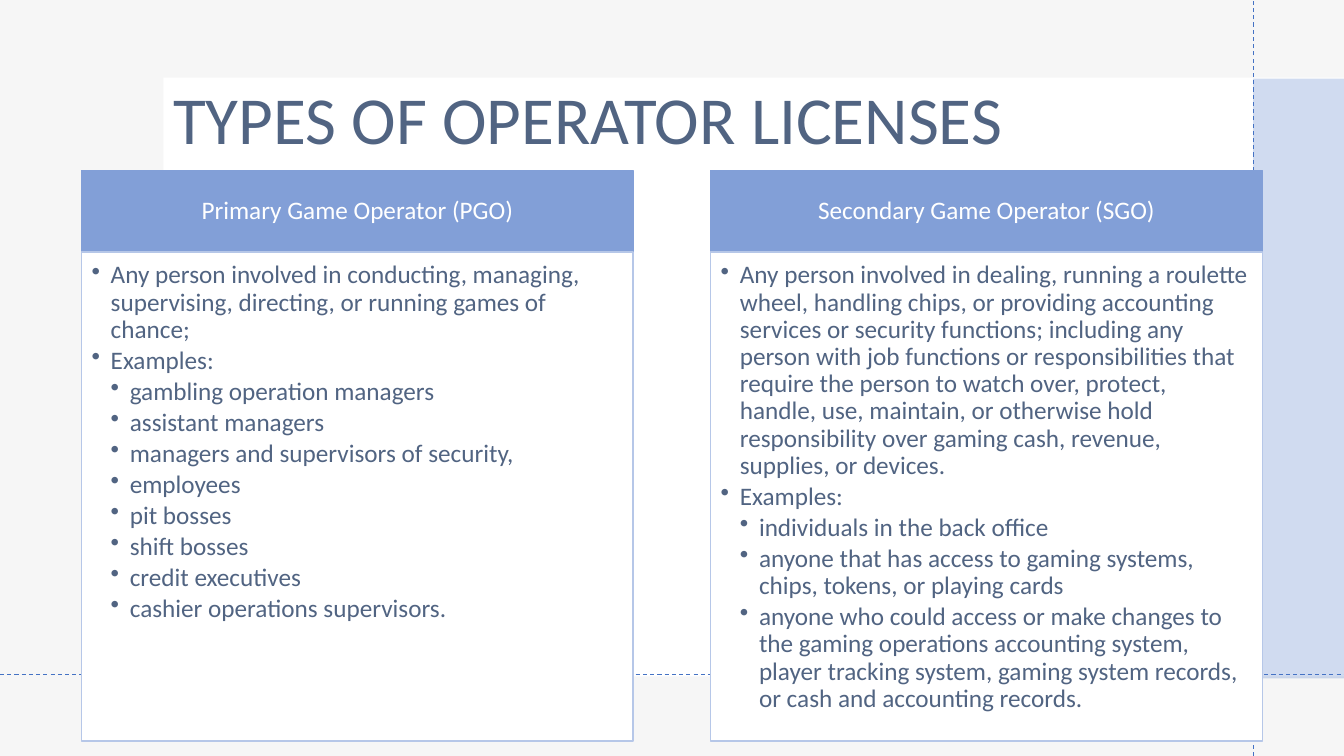
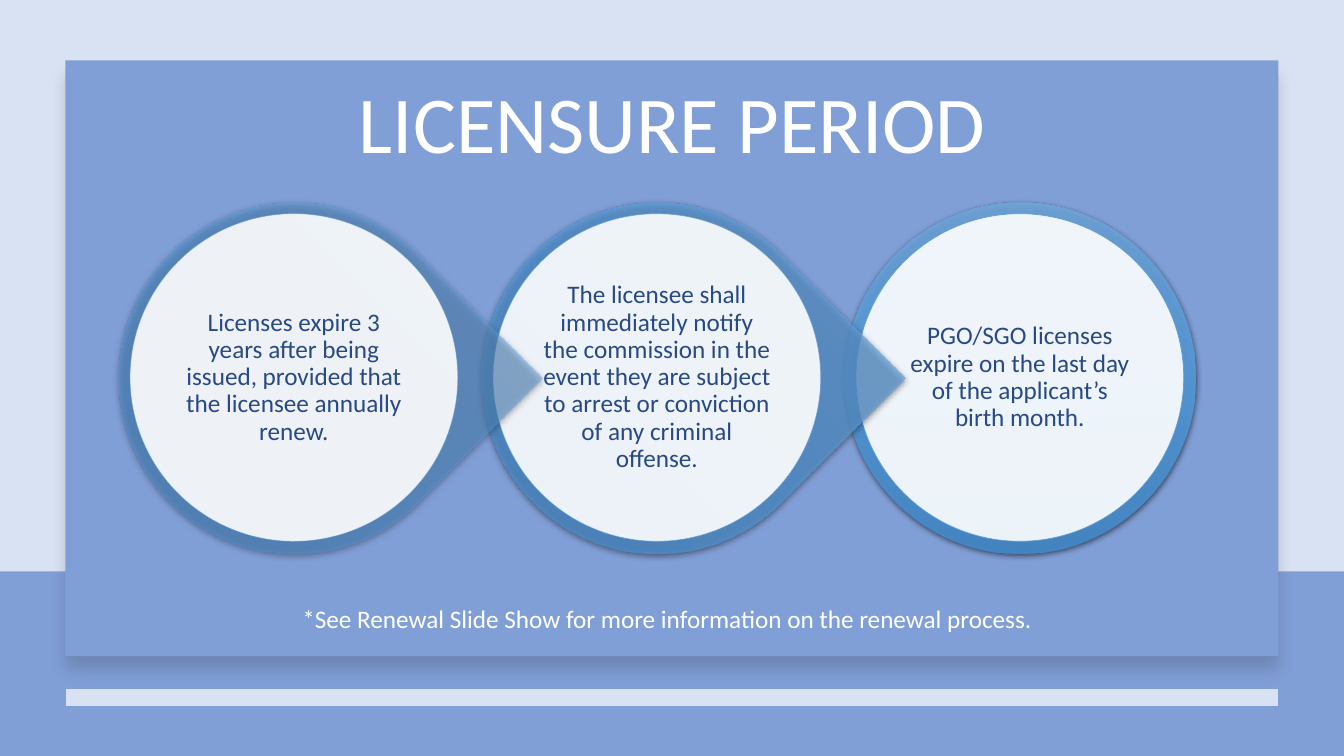
"""Build two slides on gaming operator licenses and the licensure period."""
from lxml.etree import SubElement
from pptx import Presentation
from pptx.dml.color import RGBColor
from pptx.enum.dml import MSO_LINE
from pptx.enum.shapes import MSO_CONNECTOR, MSO_SHAPE
from pptx.enum.text import MSO_ANCHOR, MSO_AUTO_SIZE, PP_ALIGN
from pptx.oxml.ns import qn
from pptx.util import Emu, Pt

WHITE = RGBColor(0xFF, 0xFF, 0xFF)
BLACK = RGBColor(0x00, 0x00, 0x00)
GRAY = RGBColor(0xE7, 0xE6, 0xE6)
SLATE = RGBColor(0x51, 0x64, 0x82)
ACCENT = RGBColor(0x44, 0x72, 0xC4)
HEADING_BLUE = RGBColor(0x82, 0x9F, 0xD7)
BORDER_BLUE = RGBColor(0xB6, 0xC7, 0xE8)
PANEL_BLUE = RGBColor(0x81, 0x9F, 0xD7)
PALE_BLUE = RGBColor(0xD9, 0xE2, 0xF3)
RING_BLUE = RGBColor(0x5B, 0x9B, 0xD5)
NAVY = RGBColor(0x29, 0x49, 0x83)
RING_STOPS = (
    (0, RGBColor(0x71, 0xA6, 0xDB)),
    (50, RGBColor(0x55, 0x9B, 0xDB)),
    (100, RGBColor(0x44, 0x8A, 0xCA)),
)

WIDTH, HEIGHT = 1333, 750
EMU_PER_PX = 9144
FONT = "Calibri"
BODY_SIZE = 18
INDENT = 19

LICENSE_TYPES = (
    (
        "Primary Game Operator (PGO)",
        "Any person involved in conducting, managing, supervising, directing, "
        "or running games of chance;",
        (
            "gambling operation managers",
            "assistant managers",
            "managers and supervisors of security,",
            "employees",
            "pit bosses",
            "shift bosses",
            "credit executives",
            "cashier operations supervisors.",
        ),
    ),
    (
        "Secondary Game Operator (SGO)",
        "Any person involved in dealing, running a roulette wheel, handling chips, "
        "or providing accounting services or security functions; including any "
        "person with job functions or responsibilities that require the person to "
        "watch over, protect, handle, use, maintain, or otherwise hold "
        "responsibility over gaming cash, revenue, supplies, or devices.",
        (
            "individuals in the back office",
            "anyone that has access to gaming systems, chips, tokens, or playing cards",
            "anyone who could access or make changes to the gaming operations "
            "accounting system, player tracking system, gaming system records, "
            "or cash and accounting records.",
        ),
    ),
)

PERIOD_STEPS = (
    ("Licenses expire 3 years after being issued, provided that the licensee "
     "annually renew.", 50),
    ("The licensee shall immediately notify the commission in the event they are "
     "subject to arrest or conviction of any criminal offense.", 70),
    ("PGO/SGO licenses expire on the last day of the applicant’s birth month.", 90),
)


def px(length):
    """Turn whole px into EMU."""
    return Emu(length * EMU_PER_PX)


def set_alpha(color, percent):
    """Make a colour element partly transparent."""
    if percent < 100:
        SubElement(color, qn("a:alpha"), val=str(percent * 1000))


class SlideBuilder:
    """Holds the shared style and the current slide."""

    def __init__(self):
        """Start an empty widescreen deck."""
        self.deck = Presentation()
        self.deck.slide_width = px(WIDTH)
        self.deck.slide_height = px(HEIGHT)
        self.page = None

    def new_page(self, color):
        """Add a blank slide with a plain background."""
        self.page = self.deck.slides.add_slide(self.deck.slide_layouts[6])
        self.page.background.fill.solid()
        self.page.background.fill.fore_color.rgb = color

    def shape(self, kind, left, top, width, height, fill, alpha=100,
              line=None, line_width=1, line_alpha=100):
        """Draw a flat preset shape."""
        box = self.page.shapes.add_shape(
            kind, px(left), px(top), px(width), px(height))
        box.shadow.inherit = False
        box.fill.solid()
        box.fill.fore_color.rgb = fill
        properties = box.element.spPr
        set_alpha(properties.find(qn("a:solidFill"))[0], alpha)
        if line is None:
            box.line.fill.background()
        else:
            box.line.color.rgb = line
            box.line.width = Pt(line_width)
            outline = properties.find(qn("a:ln"))
            set_alpha(outline.find(qn("a:solidFill"))[0], line_alpha)
        return box

    def rect(self, left, top, width, height, fill, **style):
        """Draw a rectangle."""
        return self.shape(MSO_SHAPE.RECTANGLE, left, top, width, height, fill, **style)

    def shadow(self, box, alpha, blur, distance):
        """Cast a soft black shadow downwards."""
        effects = box.element.spPr.find(qn("a:effectLst"))
        outer = SubElement(effects, qn("a:outerShdw"), blurRad=str(Pt(blur)),
                           dist=str(Pt(distance)), dir="5400000",
                           algn="ctr", rotWithShape="0")
        color = SubElement(outer, qn("a:srgbClr"), val=str(BLACK))
        set_alpha(color, alpha)

    def gradient(self, box, stops, alpha):
        """Replace the plain fill by a gradient from top to bottom."""
        properties = box.element.spPr
        solid = properties.find(qn("a:solidFill"))
        blend = SubElement(properties, qn("a:gradFill"), rotWithShape="1")
        stop_list = SubElement(blend, qn("a:gsLst"))
        for position, shade in stops:
            stop = SubElement(stop_list, qn("a:gs"), pos=str(position * 1000))
            set_alpha(SubElement(stop, qn("a:srgbClr"), val=str(shade)), alpha)
        SubElement(blend, qn("a:lin"), ang="5400000", scaled="0")
        properties.replace(solid, blend)

    def line(self, start, end, color, width, dash=None):
        """Draw a straight line between two points."""
        rule = self.page.shapes.add_connector(
            MSO_CONNECTOR.STRAIGHT, px(start[0]), px(start[1]), px(end[0]), px(end[1]))
        rule.line.color.rgb = color
        rule.line.width = Pt(width)
        if dash is not None:
            rule.line.dash_style = dash
        SubElement(rule.element.spPr, qn("a:effectLst"))

    def frame(self, box, anchor, insets):
        """Set wrapping, anchor and insets of a text frame."""
        frame = box.text_frame
        frame.word_wrap = True
        frame.vertical_anchor = anchor
        (frame.margin_left, frame.margin_top,
         frame.margin_right, frame.margin_bottom) = map(px, insets)
        return frame

    def fill_para(self, para, text, color, size=BODY_SIZE, align=PP_ALIGN.LEFT,
                  spacing=0.9):
        """Fill a paragraph with one styled run."""
        para.alignment = align
        para.line_spacing = spacing
        span = para.add_run()
        span.text = text
        span.font.name = FONT
        span.font.size = Pt(size)
        span.font.color.rgb = color

    def label(self, box, text, color, insets):
        """Centre text inside a shape."""
        frame = self.frame(box, MSO_ANCHOR.MIDDLE, insets)
        self.fill_para(frame.paragraphs[0], text, color, align=PP_ALIGN.CENTER)

    def text(self, left, top, width, height, text, color,
             anchor=MSO_ANCHOR.MIDDLE, **style):
        """Place a one-paragraph text box."""
        box = self.page.shapes.add_textbox(px(left), px(top), px(width), px(height))
        frame = self.frame(box, anchor, (10, 5, 10, 5))
        self.fill_para(frame.paragraphs[0], text, color, **style)
        return box

    def bullets(self, box, items, color):
        """Set (level, text) items as a bulleted list."""
        frame = self.frame(box, MSO_ANCHOR.TOP, (10, 10, 14, 16))
        for index, (level, text) in enumerate(items):
            para = frame.add_paragraph() if index else frame.paragraphs[0]
            para.level = level
            para.space_after = Pt(2.7)
            self.fill_para(para, text, color)
            properties = para._p.get_or_add_pPr()
            properties.set("marL", str(px(INDENT * level)))
            properties.set("indent", str(px(-INDENT)))
            SubElement(properties, qn("a:buChar"), char="•")

    def license_column(self, left, heading, duty, examples):
        """Draw a heading band over a bulleted panel."""
        band = self.rect(left, 169, 547, 82, HEADING_BLUE, line=HEADING_BLUE)
        self.label(band, heading, WHITE, (14, 8, 14, 8))
        panel = self.rect(left, 250, 547, 485, WHITE, line=BORDER_BLUE)
        items = [(1, duty), (1, "Examples:")] + [(2, example) for example in examples]
        self.bullets(panel, items, SLATE)

    def period_step(self, left, text, alpha, is_last):
        """Draw a ring, pointed unless last, around a labelled disc."""
        kind = MSO_SHAPE.OVAL if is_last else MSO_SHAPE.TEAR
        ring = self.shape(kind, left, 201, 348, 348, RING_BLUE)
        ring.rotation = 0 if is_last else 45
        self.gradient(ring, RING_STOPS, alpha)
        self.shadow(ring, 63, 4.5, 1.5)
        disc = self.shape(MSO_SHAPE.OVAL, left + 11, 212, 325, 325, WHITE, alpha=90,
                          line=RING_BLUE, line_width=0.5, line_alpha=alpha)
        self.label(disc, text, NAVY, (2, 2, 2, 2))


def build_license_types(builder):
    """Compare the two operator licenses."""
    builder.new_page(WHITE)
    builder.rect(0, 0, WIDTH, HEIGHT, GRAY, alpha=35)
    builder.rect(162, 77, WIDTH - 162, 594, WHITE)
    builder.text(162, 80, 869, 83, "TYPES OF OPERATOR LICENSES", SLATE, size=48)
    builder.rect(1243, 78, WIDTH - 1243, 595, ACCENT, alpha=25)
    for start, end in (((1243, HEIGHT), (1243, 0)), ((0, 669), (WIDTH, 669))):
        builder.line(start, end, ACCENT, 0.75, MSO_LINE.DASH)
    for index, license_type in enumerate(LICENSE_TYPES):
        builder.license_column(81 + 624 * index, *license_type)


def build_licensure_period(builder):
    """Show the three rules on the licensure period."""
    builder.new_page(PANEL_BLUE)
    builder.rect(0, 0, WIDTH, 567, PALE_BLUE)
    panel = builder.rect(65, 60, 1203, 591, PANEL_BLUE)
    builder.shadow(panel, 15, 11, 10)
    last = len(PERIOD_STEPS) - 1
    for index, (text, alpha) in reversed(list(enumerate(PERIOD_STEPS))):
        builder.period_step(118 + 360 * index, text, alpha, index == last)
    builder.text(167, 78, 1000, 96, "LICENSURE PERIOD", WHITE,
                 size=57.6, align=PP_ALIGN.CENTER)
    builder.line((1268, 692), (65, 692), PALE_BLUE, 12)
    note = builder.text(
        290, 594, 753, 40,
        "*See Renewal Slide Show for more information on the renewal process.",
        WHITE, anchor=MSO_ANCHOR.TOP, spacing=1.0)
    note.text_frame.auto_size = MSO_AUTO_SIZE.SHAPE_TO_FIT_TEXT


def main():
    """Build and save the deck."""
    builder = SlideBuilder()
    build_license_types(builder)
    build_licensure_period(builder)
    builder.deck.save("out.pptx")


if __name__ == "__main__":
    main()
